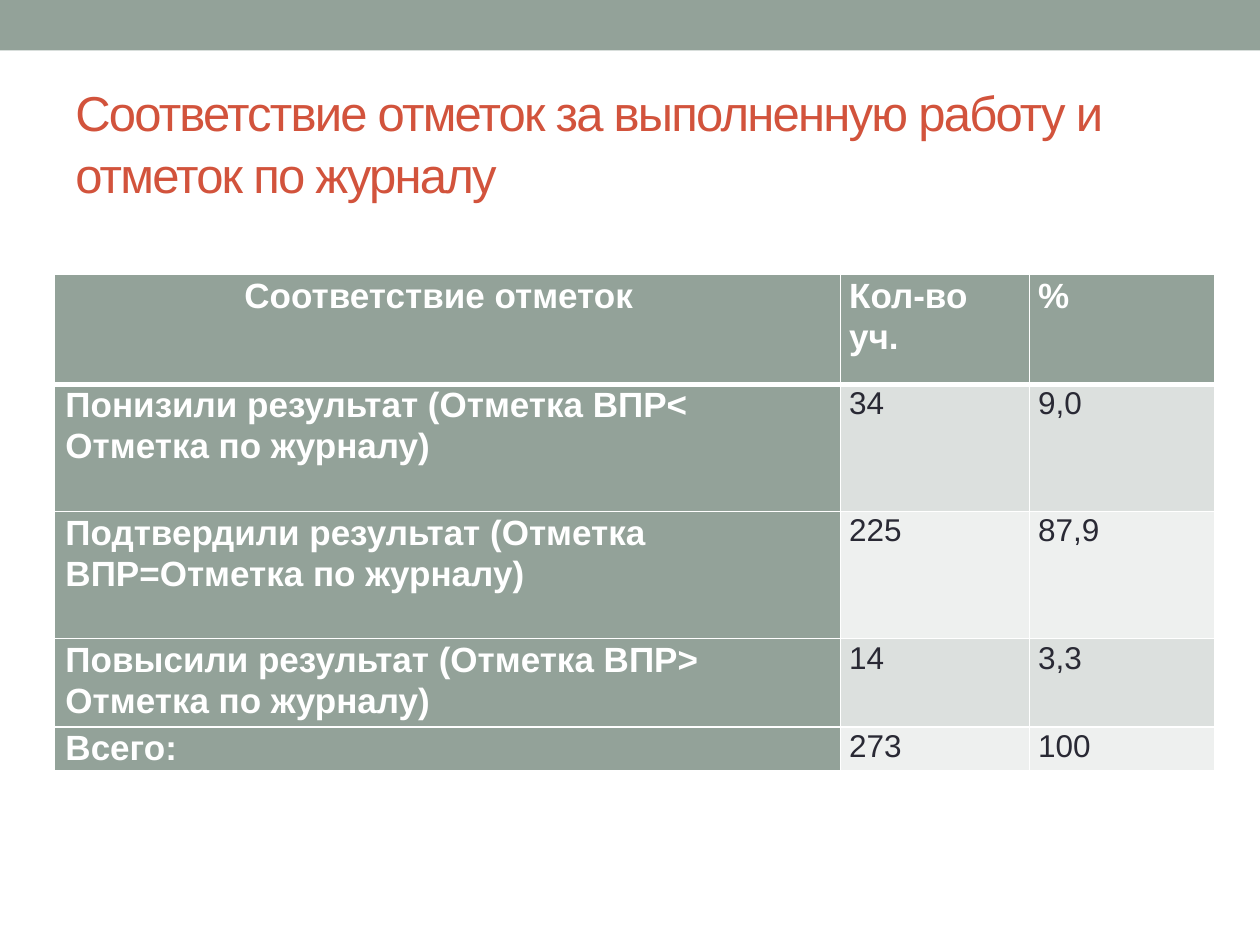
from dataclasses import dataclass

from lxml import etree
from pptx import Presentation
from pptx import util as u
from pptx.dml import color
from pptx.enum import shapes, text
from pptx.oxml import ns


@dataclass(frozen=True)
class Theme:
    font: str = "Arial"
    sage: str = "93A299"
    accent: str = "D2533C"
    ink: str = "292934"
    white: str = "FFFFFF"
    bands: tuple = ("DCE0DE", "EEF0EF")
    title_size: int = 28
    label_size: int = 20
    value_size: int = 18
    line_spacing: float = 1.05
    rule: int = 1
    header_rule: int = 3


class SlideBuilder:
    """Draws styled elements on one slide, placed by shares of its size."""

    def __init__(self, presentation, theme):
        self.theme = theme
        self.width = presentation.slide_width
        self.height = presentation.slide_height
        self.slide = presentation.slides.add_slide(presentation.slide_layouts[6])

    def box(self, left, top, width, height):
        return (int(left * self.width), int(top * self.height),
                int(width * self.width), int(height * self.height))

    def style(self, paragraph, size, colour, bold=False):
        paragraph.line_spacing = self.theme.line_spacing
        font = paragraph.font
        font.name, font.size, font.bold = self.theme.font, u.Pt(size), bold
        font.color.rgb = color.RGBColor.from_string(colour)

    def band(self, *place):
        shape = self.slide.shapes.add_shape(shapes.MSO_SHAPE.RECTANGLE, *self.box(*place))
        shape.shadow.inherit = False
        shape.fill.solid()
        shape.fill.fore_color.rgb = color.RGBColor.from_string(self.theme.sage)
        shape.line.fill.background()

    def title(self, wording, *place):
        frame = self.slide.shapes.add_textbox(*self.box(*place)).text_frame
        frame.word_wrap = True
        frame.vertical_anchor = text.MSO_ANCHOR.MIDDLE
        paragraph = frame.paragraphs[0]
        run = paragraph.add_run()
        run.text = wording
        run.font._element.set("spc", "-100")
        self.style(paragraph, self.theme.title_size, self.theme.accent)

    def borders(self, cell, top, bottom):
        properties = cell._tc.get_or_add_tcPr()
        rule = self.theme.rule
        for side, width in zip("LRTB", (rule, rule, top, bottom)):
            line = etree.SubElement(properties, ns.qn(f"a:ln{side}"), w=str(u.Pt(width)))
            fill = etree.SubElement(line, ns.qn("a:solidFill"))
            etree.SubElement(fill, ns.qn("a:srgbClr"), val=self.theme.white)

    def cell(self, cell, wording, row, column):
        theme = self.theme
        heading = row == 0 or column == 0
        self.borders(cell, theme.header_rule if row == 1 else theme.rule,
                     theme.header_rule if row == 0 else theme.rule)
        cell.fill.solid()
        fill = theme.sage if heading else theme.bands[(row - 1) % 2]
        cell.fill.fore_color.rgb = color.RGBColor.from_string(fill)
        cell.margin_left = cell.margin_right = u.Inches(0.07)
        cell.margin_top = cell.margin_bottom = 0
        cell.text = wording
        paragraph = cell.text_frame.paragraphs[0]
        if heading:
            self.style(paragraph, theme.label_size, theme.white, True)
        else:
            self.style(paragraph, theme.value_size, theme.ink)
        if column == 0:
            indent = u.Inches(0.02 if row else 1.44)
            paragraph._p.get_or_add_pPr().set("marL", str(indent))

    def table(self, rows, left, top, columns, heights):
        place = self.box(left, top, sum(columns), sum(heights))
        table = self.slide.shapes.add_table(len(rows), len(columns), *place).table
        for column, share in zip(table.columns, columns):
            column.width = int(share * self.width)
        for row, share in zip(table.rows, heights):
            row.height = int(share * self.height)
        for row, wordings in enumerate(rows):
            for column, wording in enumerate(wordings):
                self.cell(table.cell(row, column), wording, row, column)


def main():
    presentation = Presentation()
    presentation.slide_width, presentation.slide_height = u.Inches(10), u.Inches(7.5)
    builder = SlideBuilder(presentation, Theme())
    builder.band(0, 0, 1, 0.4 / 7.5)
    builder.title("Соответствие отметок за выполненную работу и отметок по журналу",
                  0.05, 0.58 / 7.5, 0.9, 1.08 / 7.5)
    rows = [
        ("Соответствие отметок", "Кол-во уч.", "%"),
        ("Понизили результат (Отметка ВПР< Отметка по журналу)", "34", "9,0"),
        ("Подтвердили результат (Отметка ВПР=Отметка по журналу)", "225", "87,9"),
        ("Повысили результат (Отметка ВПР> Отметка по журналу)", "14", "3,3"),
        ("Всего:", "273", "100"),
    ]
    heights = [inches / 7.5 for inches in (0.87, 1.01, 1.01, 0.7, 0.35)]
    builder.table(rows, 0.043, 2.18 / 7.5, (0.624, 0.15, 0.147), heights)
    presentation.save("out.pptx")


if __name__ == "__main__":
    main()
